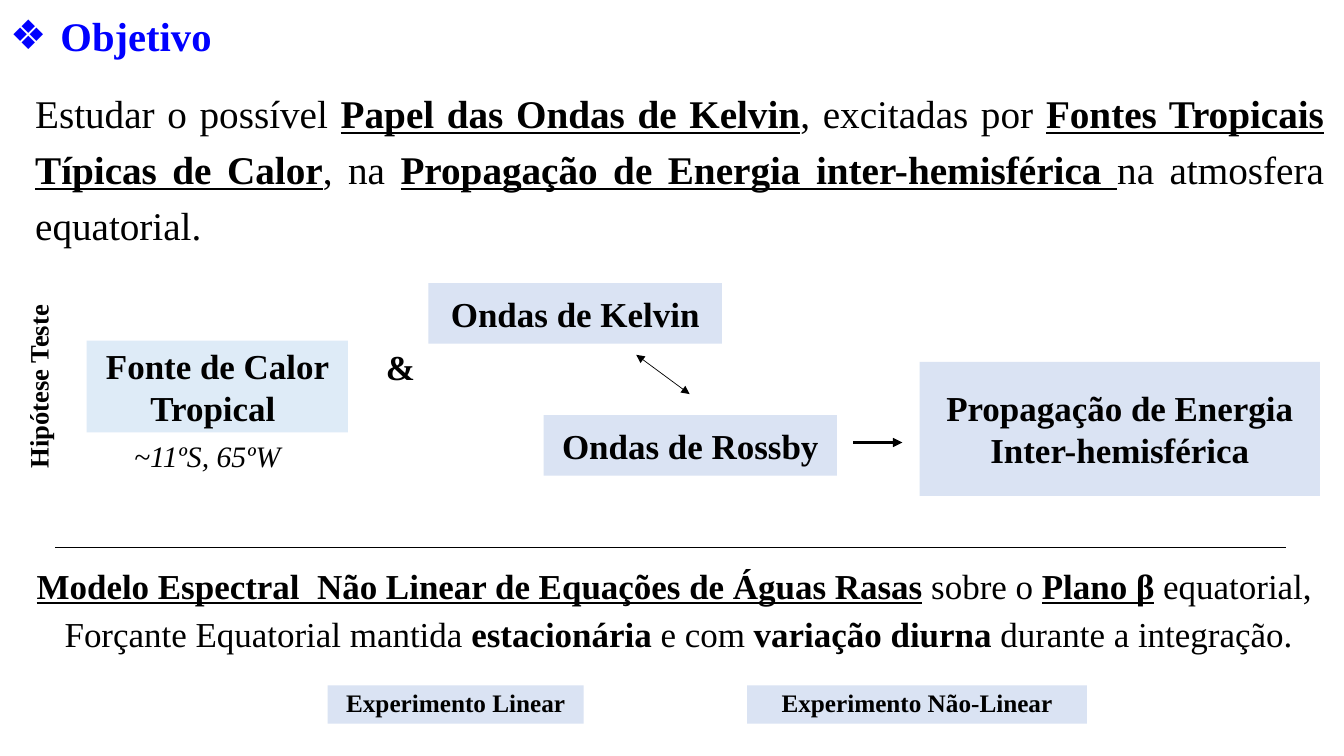
"""Builds the slide on the objective, hypothesis and model of the Kelvin wave study."""
import lxml.etree
import pptx
import pptx.dml.color
import pptx.enum.shapes
import pptx.enum.text
import pptx.oxml.ns
import pptx.util

COLORS = {"text": "000000", "heading": "0000FF", "source": "DEEBF7", "wave": "DAE3F3"}
ALIGN = pptx.enum.text.PP_ALIGN
ANCHOR = pptx.enum.text.MSO_ANCHOR
qn = pptx.oxml.ns.qn

deck = pptx.Presentation()
deck.slide_width = pptx.util.Inches(13.33)
deck.slide_height = pptx.util.Inches(7.5)
column, row = deck.slide_width / 100, deck.slide_height / 100
slide = deck.slides.add_slide(deck.slide_layouts[1])
shapes = slide.shapes


def place(part, left, top, width, height):
    """Sets a part's box in hundredths of the slide."""
    part.left, part.top = round(left * column), round(top * row)
    part.width, part.height = round(width * column), round(height * row)


def write(part, lines, size, align=ALIGN.CENTER, spacing=None, before=0,
          anchor=ANCHOR.MIDDLE, bold=None, italic=None, color="text"):
    """Fills a part with lines; every second piece of a line is emphasised."""
    frame = part.text_frame
    frame.word_wrap = True
    frame.auto_size = pptx.enum.text.MSO_AUTO_SIZE.NONE
    frame.vertical_anchor = anchor
    for number, (pieces, underlined) in enumerate(lines):
        paragraph = frame.add_paragraph() if number else frame.paragraphs[0]
        paragraph.alignment = align
        paragraph.line_spacing = spacing
        paragraph.space_before = pptx.util.Pt(before)
        paragraph.font.name = "Times New Roman"
        paragraph.font.size = pptx.util.Pt(size)
        paragraph.font.bold, paragraph.font.italic = bold, italic
        paragraph.font.color.rgb = pptx.dml.color.RGBColor.from_string(COLORS[color])
        for index, piece in enumerate(pieces):
            run = paragraph.add_run()
            run.text = piece
            if index % 2:
                run.font.bold = True
                run.font.underline = underlined


objective = shapes.add_textbox(0, 0, 0, 0)
place(objective, 1.88, 9.33, 97.37, 24.8)
write(objective, [(["Estudar o possível ", "Papel das Ondas de Kelvin", ", excitadas por ",
                    "Fontes Tropicais Típicas de Calor", ", na ",
                    "Propagação de Energia inter-hemisférica ",
                    "na atmosfera equatorial."], True)],
      28, ALIGN.JUSTIFY, pptx.util.Pt(40))

heading = shapes.title
place(heading, 0, 0.13, 26.86, 9.2)
write(heading, [(["Objetivo"], None)], 29, ALIGN.JUSTIFY, bold=True, color="heading")
heading_format = heading.text_frame.paragraphs[0]._p.get_or_add_pPr()
heading_format.set("marL", str(pptx.util.Inches(0.5)))
heading_format.set("indent", str(-pptx.util.Inches(0.5)))
lxml.etree.SubElement(heading_format, qn("a:buFont")).set("typeface", "Arial")
lxml.etree.SubElement(heading_format, qn("a:buChar")).set("char", "❖")
heading_format.append(heading_format.find(qn("a:defRPr")))

model = slide.placeholders[1]
place(model, 1.05, 75.07, 98.87, 13.07)
write(model, [(["", "Modelo Espectral  Não Linear de Equações de Águas Rasas",
                " sobre o ", "Plano β", " equatorial, "], True),
              (["Forçante Equatorial mantida ", "estacionária", " e com ",
                "variação diurna", " durante a integração."], None)],
      25, spacing=0.8, before=10, anchor=ANCHOR.TOP, bold=False)
first_line = model.text_frame.paragraphs[0]
first_line._p.remove(first_line.runs[0]._r)
for paragraph in model.text_frame.paragraphs:
    line_format = paragraph._p.get_or_add_pPr()
    line_format.set("marL", "0")
    line_format.set("indent", "0")
    line_format.find(qn("a:defRPr")).addprevious(
        lxml.etree.Element(qn("a:buNone")))

diagram = {"size": 25, "bold": True}
experiment = {"size": 18, "bold": True, "spacing": 0.9, "before": 10, "anchor": ANCHOR.TOP}
for box, fill, lines, style in [
    ((6.45, 45.07, 19.43, 12.13), "source", ["Fonte de Calor Tropical "], diagram),
    ((31.88, 37.47, 21.83, 8), "wave", ["Ondas de Kelvin"], diagram),
    ((40.44, 54.93, 21.83, 8), "wave", ["Ondas de Rossby"], diagram),
    ((68.42, 47.87, 29.78, 17.73), "wave",
     ["Propagação de Energia", "Inter-hemisférica"], diagram),
    ((24.38, 90.67, 19.05, 5.07), "wave", ["Experimento Linear"], experiment),
    ((55.59, 90.67, 25.28, 5.07), "wave", ["Experimento Não-Linear"], experiment),
]:
    block = shapes.add_shape(pptx.enum.shapes.MSO_SHAPE.RECTANGLE, 0, 0, 0, 0)
    place(block, *box)
    block.shadow.inherit = False
    block.fill.solid()
    block.fill.fore_color.rgb = pptx.dml.color.RGBColor.from_string(COLORS[fill])
    block.line.fill.background()
    write(block, [([line], None) for line in lines], **style)

for box, label, turn, style in [
    ((27.61, 44.53, 4.35, 7.87), "&", 0, diagram),
    ((6.08, 58.53, 18.68, 5.07), "~11ºS, 65ºW", 0,
     {"size": 21.2, "italic": True, "spacing": 0.7, "before": 10, "anchor": ANCHOR.TOP}),
    ((-5.4, 47.87, 17.55, 6.53), "Hipótese Teste", 270, {**experiment, "size": 19}),
]:
    caption = shapes.add_textbox(0, 0, 0, 0)
    place(caption, *box)
    caption.rotation = turn
    write(caption, [([label], None)], **style)

for x1, y1, x2, y2, weight, arrowheads in [
    (4.13, 72.4, 95.65, 72.4, 0.5, []),
    (47.34, 46.93, 51.31, 52.13, 0.5, ["a:headEnd", "a:tailEnd"]),
    (63.47, 58.53, 67.14, 58.53, 2.25, ["a:tailEnd"]),
]:
    link = shapes.add_connector(
        pptx.enum.shapes.MSO_CONNECTOR.STRAIGHT, round(x1 * column), round(y1 * row),
        round(x2 * column), round(y2 * row))
    link.line.width = pptx.util.Pt(weight)
    link.line.color.rgb = pptx.dml.color.RGBColor.from_string(COLORS["text"])
    outline = link.line._get_or_add_ln()
    for arrowhead in arrowheads:
        lxml.etree.SubElement(outline, qn(arrowhead)).set("type", "triangle")
    lxml.etree.SubElement(link._element.spPr, qn("a:effectLst"))

deck.save("out.pptx")
